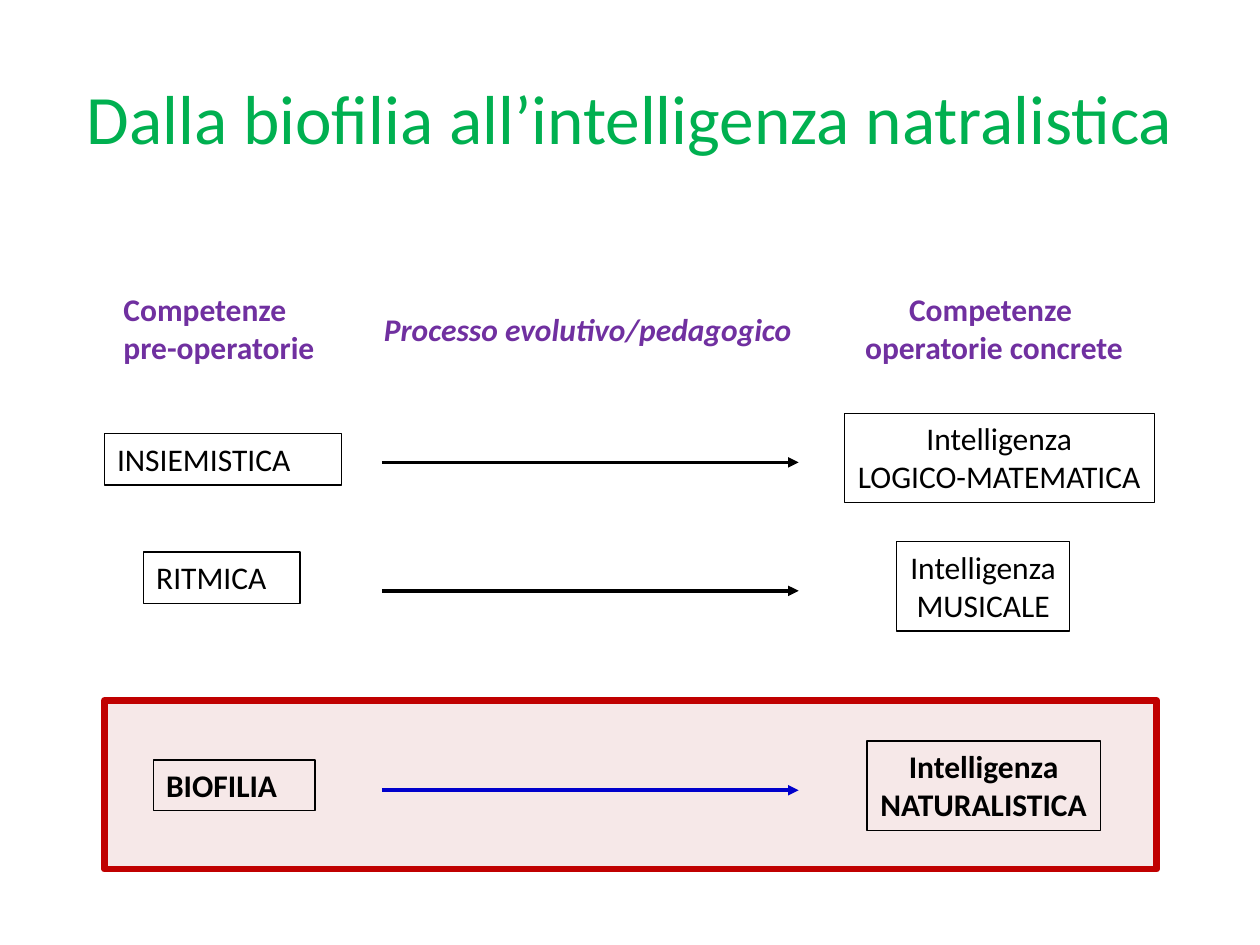
import pptx
import pptx.dml.color
import pptx.enum.shapes
import pptx.enum.text
import pptx.oxml
import pptx.oxml.ns
import pptx.util
from pptx.dml.color import RGBColor
from pptx.util import Cm, Pt

BLACK = RGBColor(0x00, 0x00, 0x00)
GREEN = RGBColor(0x00, 0xB0, 0x50)
PURPLE = RGBColor(0x70, 0x30, 0xA0)
BLUE = RGBColor(0x00, 0x00, 0xCC)
RED = RGBColor(0xC0, 0x00, 0x00)
PINK = RGBColor(0xE6, 0xB9, 0xB8)

FONT = "Calibri"
LEFT = pptx.enum.text.PP_ALIGN.LEFT
CENTER = pptx.enum.text.PP_ALIGN.CENTER
RECTANGLE = pptx.enum.shapes.MSO_SHAPE.RECTANGLE

# All positions are in centimetres: left, top, width, height.
TITLE = "Dalla biofilia all’intelligenza natralistica"
TITLE_AREA = (1.27, 0.76, 22.86, 3.18)
HIGHLIGHT_AREA = (2.11, 14.12, 21.21, 3.4)

HEADINGS = [
    ("Competenze\npre-operatorie", (2.24, 5.72, 4.39, 1.8), LEFT, False),
    ("Competenze \noperatorie concrete", (17.17, 5.72, 5.74, 1.8), CENTER, False),
    ("Processo evolutivo/pedagogico", (7.49, 6.12, 8.84, 1.02), LEFT, True),
]

ARROW_START, ARROW_END = 7.7, 16.1
# competence, its area, intelligence, its area, arrow height, arrow colour, bold
PATHWAYS = [
    ("INSIEMISTICA", (2.11, 8.74, 4.78, 1.04),
     "Intelligenza\nLOGICO-MATEMATICA", (17.02, 8.33, 6.25, 1.8), 9.32, BLACK, False),
    ("RITMICA", (2.9, 11.13, 3.15, 1.04),
     "Intelligenza\nMUSICALE", (18.08, 10.92, 3.48, 1.8), 11.91, BLACK, False),
    ("BIOFILIA", (3.1, 15.32, 3.25, 1.02),
     "Intelligenza\nNATURALISTICA", (17.48, 14.94, 4.7, 1.8), 15.93, BLUE, True),
]


def in_cm(area):
    return [Cm(length) for length in area]


def write(shape, text, color, align, size=18, bold=False, italic=False):
    shape.text_frame.text = text
    for paragraph in shape.text_frame.paragraphs:
        paragraph.alignment = align
        for run in paragraph.runs:
            run.font.name = FONT
            run.font.size = Pt(size)
            run.font.bold = bold
            run.font.italic = italic
            run.font.color.rgb = color


def fit_to_text(shape):
    frame = shape.text_frame
    frame.word_wrap = False
    frame.auto_size = pptx.enum.text.MSO_AUTO_SIZE.SHAPE_TO_FIT_TEXT
    frame.vertical_anchor = pptx.enum.text.MSO_ANCHOR.TOP


def add_rectangle(slide, area, line_color, line_width):
    rectangle = slide.shapes.add_shape(RECTANGLE, *in_cm(area))
    rectangle.shadow.inherit = False
    rectangle.fill.background()
    rectangle.line.color.rgb = line_color
    rectangle.line.width = Pt(line_width)
    return rectangle


def add_highlight(slide):
    highlight = add_rectangle(slide, HIGHLIGHT_AREA, RED, 4)
    highlight.fill.solid()
    highlight.fill.fore_color.rgb = PINK
    tint = highlight.fill._xPr.find(".//" + pptx.oxml.ns.qn("a:srgbClr"))
    alpha = pptx.oxml.parse_xml(
        "<a:alpha %s val='32000'/>" % pptx.oxml.ns.nsdecls("a"))
    tint.append(alpha)


def add_box(slide, text, area, align, bold):
    box = add_rectangle(slide, area, BLACK, 0.75)
    write(box, text, BLACK, align, bold=bold)
    fit_to_text(box)


def add_arrow(slide, height, color):
    arrow = slide.shapes.add_connector(
        pptx.enum.shapes.MSO_CONNECTOR.STRAIGHT,
        Cm(ARROW_START), Cm(height), Cm(ARROW_END), Cm(height))
    arrow.line.color.rgb = color
    arrow.line.width = Pt(2)
    namespace = pptx.oxml.ns.nsdecls("a")
    arrow.line._get_or_add_ln().append(
        pptx.oxml.parse_xml("<a:tailEnd %s type='triangle'/>" % namespace))
    arrow._element.spPr.append(
        pptx.oxml.parse_xml("<a:effectLst %s/>" % namespace))


def main():
    deck = pptx.Presentation()
    deck.slide_width, deck.slide_height = Cm(25.4), Cm(19.05)
    slide = deck.slides.add_slide(deck.slide_layouts[5])

    add_highlight(slide)

    title = slide.shapes.title
    title.left, title.top, title.width, title.height = in_cm(TITLE_AREA)
    title.text_frame.auto_size = pptx.enum.text.MSO_AUTO_SIZE.NONE
    title.text_frame.vertical_anchor = pptx.enum.text.MSO_ANCHOR.MIDDLE
    write(title, TITLE, GREEN, CENTER, size=39.6)

    for text, area, align, italic in HEADINGS:
        heading = slide.shapes.add_textbox(*in_cm(area))
        write(heading, text, PURPLE, align, bold=True, italic=italic)
        fit_to_text(heading)

    for competence, start, intelligence, end, height, color, bold in PATHWAYS:
        add_box(slide, competence, start, LEFT, bold)
        add_box(slide, intelligence, end, CENTER, bold)
        add_arrow(slide, height, color)

    deck.save("out.pptx")


if __name__ == "__main__":
    main()
